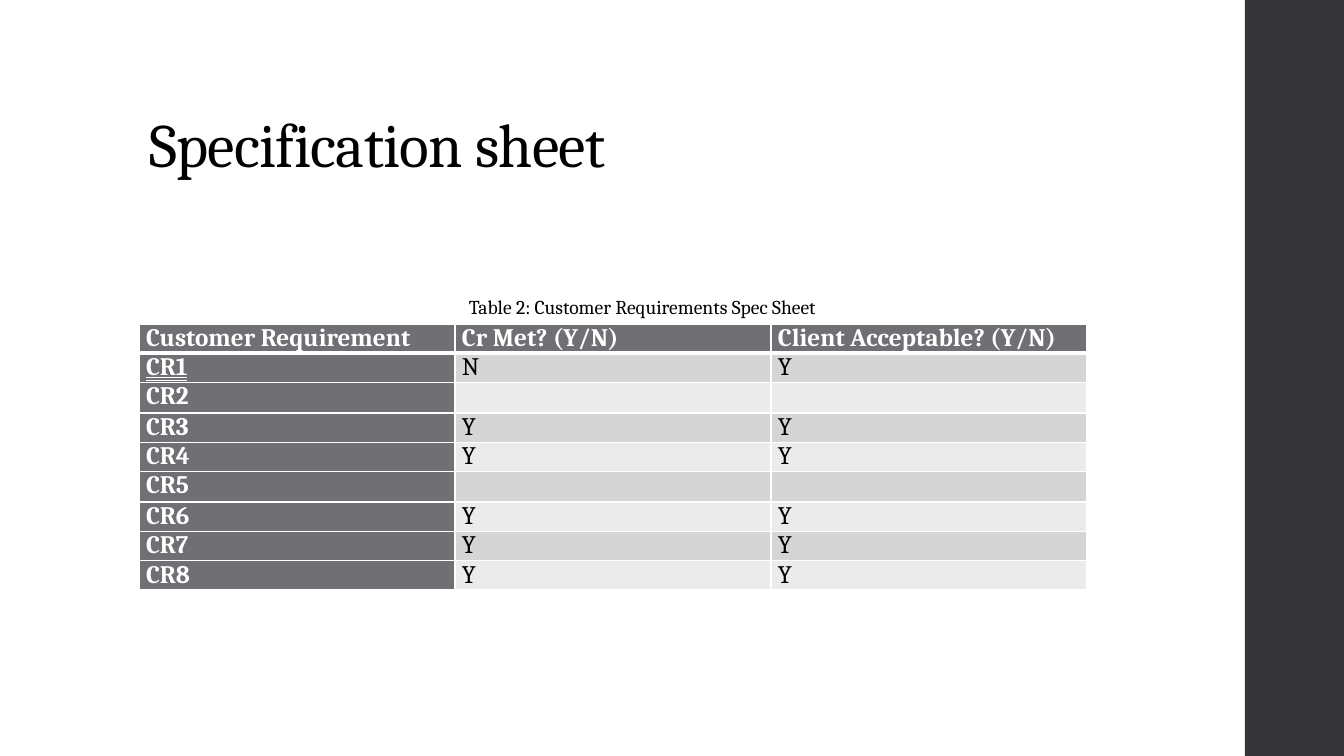
from pptx import Presentation
from pptx.dml.color import RGBColor
from pptx.enum import shapes, text
from pptx.oxml import parse_xml
from pptx.oxml.ns import nsdecls
from pptx.util import Pt

PX = 914400 / 100.8
FONT = "Cambria"
WHITE, BLACK, GREY = "FFFFFF", "000000", "6F6F74"
BANDS = ["EBEBEB", "D5D5D6"]


def px(*lengths):
    return [round(n * PX) for n in lengths]


def add_run(p, words, size, color, bold=False):
    r = p.add_run()
    r.text = words
    r.font.name = FONT
    r.font.size = Pt(size)
    r.font.bold = bold
    r.font.color.rgb = RGBColor.from_string(color)
    return r


prs = Presentation()
prs.slide_width, prs.slide_height = px(1344, 756)
s = prs.slides.add_slide(prs.slide_layouts[5])

# Side bar
bar = s.shapes.add_shape(shapes.MSO_SHAPE.RECTANGLE, *px(1245, 0, 99, 756))
bar.shadow.inherit = False
bar.fill.solid()
bar.fill.fore_color.rgb = RGBColor.from_string("353537")
bar.line.fill.background()

# Title
title = s.shapes.title
title.left, title.top, title.width, title.height = px(139, 40, 1068, 146)
tf = title.text_frame
tf.word_wrap = True
tf.auto_size = text.MSO_AUTO_SIZE.NONE
tf.vertical_anchor = text.MSO_ANCHOR.BOTTOM
p = tf.paragraphs[0]
p.alignment = text.PP_ALIGN.LEFT
p.line_spacing = 0.9
r = add_run(p, "Specification sheet", 44, BLACK)
r.font._element.set("spc", "-50")

# Requirements table
rows = [
    ("Customer Requirement", "Cr Met? (Y/N)", "Client Acceptable? (Y/N)"),
    ("CR1", "N", "Y"),
    ("CR2", "", ""),
    ("CR3", "Y", "Y"),
    ("CR4", "Y", "Y"),
    ("CR5", "", ""),
    ("CR6", "Y", "Y"),
    ("CR7", "Y", "Y"),
    ("CR8", "Y", "Y"),
]
table = s.shapes.add_table(len(rows), 3, *px(139, 324, 948, 261)).table
for i, row in enumerate(rows):
    for j, words in enumerate(row):
        cell = table.cell(i, j)
        heading = i == 0 or j == 0
        cell.margin_left, cell.margin_right, cell.margin_top, cell.margin_bottom = px(7, 7, 0, 0)
        widths = {"L": 1, "R": 1, "T": 3 if i == 1 else 1, "B": 3 if i == 0 else 1}
        for side, width in widths.items():
            cell._tc.get_or_add_tcPr().append(parse_xml(
                f'<a:ln{side} {nsdecls("a")} w="{Pt(width)}"><a:solidFill>'
                f'<a:srgbClr val="{WHITE}"/></a:solidFill></a:ln{side}>'))
        cell.fill.solid()
        cell.fill.fore_color.rgb = RGBColor.from_string(GREY if heading else BANDS[i % 2])
        if words:
            p = cell.text_frame.paragraphs[0]
            p.alignment = text.PP_ALIGN.JUSTIFY
            r = add_run(p, words, 18, WHITE if heading else BLACK, heading)
            if words == "CR1":
                r.font.underline = text.MSO_UNDERLINE.DOUBLE_LINE

# Caption
caption = s.shapes.add_textbox(*px(459, 290, 427, 34))
tf = caption.text_frame
tf.word_wrap = True
tf.auto_size = text.MSO_AUTO_SIZE.SHAPE_TO_FIT_TEXT
add_run(tf.paragraphs[0], "Table 2: Customer Requirements Spec Sheet", 14, BLACK)

prs.save("out.pptx")
